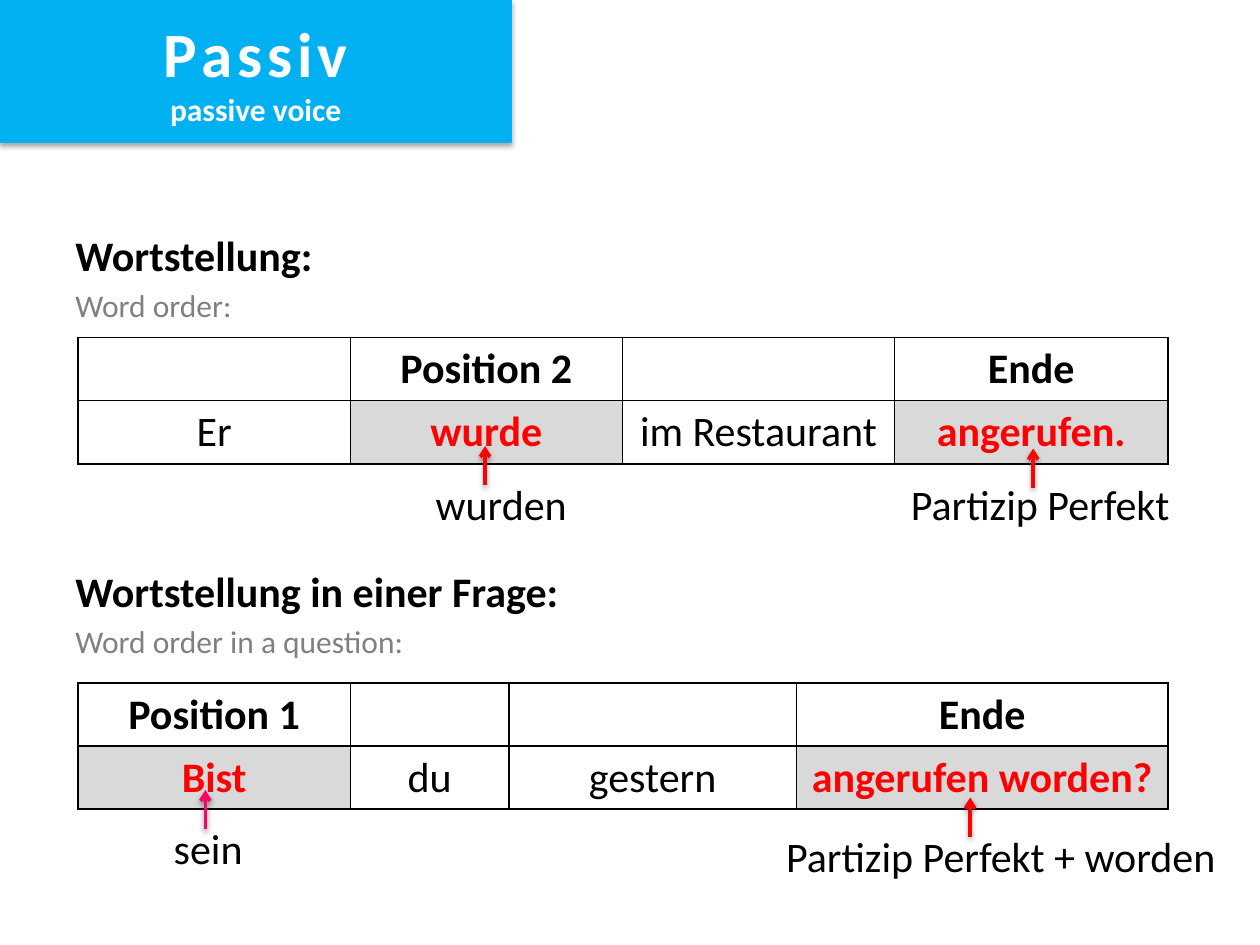
from lxml.etree import SubElement
from pptx import Presentation
from pptx.dml.color import RGBColor
from pptx.enum.shapes import MSO_CONNECTOR, MSO_SHAPE
from pptx.enum.text import MSO_ANCHOR, PP_ALIGN
from pptx.oxml import parse_xml
from pptx.oxml.ns import nsdecls, qn
from pptx.util import Inches, Pt

hue = RGBColor.from_string
BLACK, WHITE, RED, GREY = "000000", "FFFFFF", "FF0000", "D9D9D9"
HEAD = dict(size=Pt(24), bold=True)
BODY = dict(size=Pt(24), bold=False)
SMALL = dict(size=Pt(18), bold=False)

deck = Presentation()
deck.slide_width, deck.slide_height = Inches(10), Inches(7.5)
slide = deck.slides.add_slide(deck.slide_layouts[6])
shapes = slide.shapes
# Grid of 1000 columns by 750 rows
unit = deck.slide_width // 1000


def write(para, text, color, form):
    """Add a run in the given colour and format."""
    run = para.add_run()
    run.text = text
    for key, value in {"name": "Calibri", **form}.items():
        setattr(run.font, key, value)
    run.font.color.rgb = hue(color)


def shade(shape, drop, alpha):
    """Give the shape a soft shadow straight below it."""
    shape._element.spPr.append(parse_xml(
        f'<a:effectLst {nsdecls("a")}><a:outerShdw blurRad="40000" dist="{drop}" '
        f'dir="5400000" rotWithShape="0"><a:srgbClr val="{BLACK}">'
        f'<a:alpha val="{alpha}000"/></a:srgbClr></a:outerShdw></a:effectLst>'))


# Section headings
for top, german, english in [
    (177, "Wortstellung:", "Word order:"),
    (444, "Wortstellung in einer Frage:", "Word order in a question:"),
]:
    frame = shapes.add_textbox(50 * unit, top * unit, 900 * unit, 90 * unit).text_frame
    frame.word_wrap = True
    write(frame.paragraphs[0], german, BLACK, HEAD)
    para = frame.add_paragraph()
    para.space_before = Pt(3.6)
    write(para, english, "808080", SMALL)

# Word order tables: a bold head row, then a row with the verb parts marked
for top, widths, heads, words in [
    (268, (216, 216, 216, 217), ("", "Position 2", "", "Ende"),
     ("Er", "wurde", "im Restaurant", "angerufen.")),
    (542, (216, 126, 228, 295), ("Position 1", "", "", "Ende"),
     ("Bist", "du", "gestern", "angerufen worden?")),
]:
    table = shapes.add_table(2, 4, 62 * unit, top * unit, sum(widths) * unit,
                             100 * unit).table
    table.first_row = table.horz_banding = False
    for col, width in zip(table.columns, widths):
        col.width = width * unit
    for r, row in enumerate((heads, words)):
        table.rows[r].height = 50 * unit
        for c, text in enumerate(row):
            cell = table.cell(r, c)
            verb = r == 1 and heads[c] != ""
            for side in ("lnL", "lnR", "lnT", "lnB"):
                edge = SubElement(cell._tc.get_or_add_tcPr(), qn("a:" + side),
                                  w=str(Pt(1)))
                paint = SubElement(edge, qn("a:solidFill"))
                SubElement(paint, qn("a:srgbClr"), val=BLACK)
            cell.fill.solid()
            cell.fill.fore_color.rgb = hue(GREY if verb else WHITE)
            para = cell.text_frame.paragraphs[0]
            para.alignment = PP_ALIGN.CENTER
            if text:
                write(para, text, RED if verb else BLACK,
                      HEAD if verb or r == 0 else BODY)

# Notes below the tables
for left, top, width, text in [
    (336, 375, 193, "wurden"),
    (713, 375, 265, "Partizip Perfekt"),
    (128, 648, 147, "sein"),
    (614, 654, 374, "Partizip Perfekt + worden"),
]:
    frame = shapes.add_textbox(left * unit, top * unit, width * unit, 51 * unit).text_frame
    frame.word_wrap = True
    write(frame.paragraphs[0], text, BLACK, BODY)

# Arrows from the notes up to the verbs
for x, foot, color in [(385, 385, RED), (820, 387, RED), (163, 658, "FF0066"),
                       (770, 664, RED)]:
    arrow = shapes.add_connector(MSO_CONNECTOR.STRAIGHT, x * unit, foot * unit,
                                 x * unit, (foot - 31) * unit)
    arrow.line.color.rgb = hue(color)
    arrow.line.width = Pt(2)
    SubElement(arrow.line._get_or_add_ln(), qn("a:tailEnd"), type="arrow")
    shade(arrow, 20000, 38)

# Title banner
banner = shapes.add_shape(MSO_SHAPE.RECTANGLE, 0, 0, 406 * unit, 113 * unit)
banner.fill.solid()
banner.fill.fore_color.rgb = banner.line.color.rgb = hue("00B0F0")
banner.line.width = Pt(0.75)
shade(banner, 23000, 35)
banner.text_frame.vertical_anchor = MSO_ANCHOR.MIDDLE
para = banner.text_frame.paragraphs[0]
para.alignment = PP_ALIGN.CENTER
for sign in "P a s s i v":
    write(para, sign, WHITE, dict(size=Pt(12 if sign == " " else 36), bold=True))
para.add_line_break()
write(para, "passive voice", WHITE, dict(size=Pt(18), bold=True))

deck.save("out.pptx")
